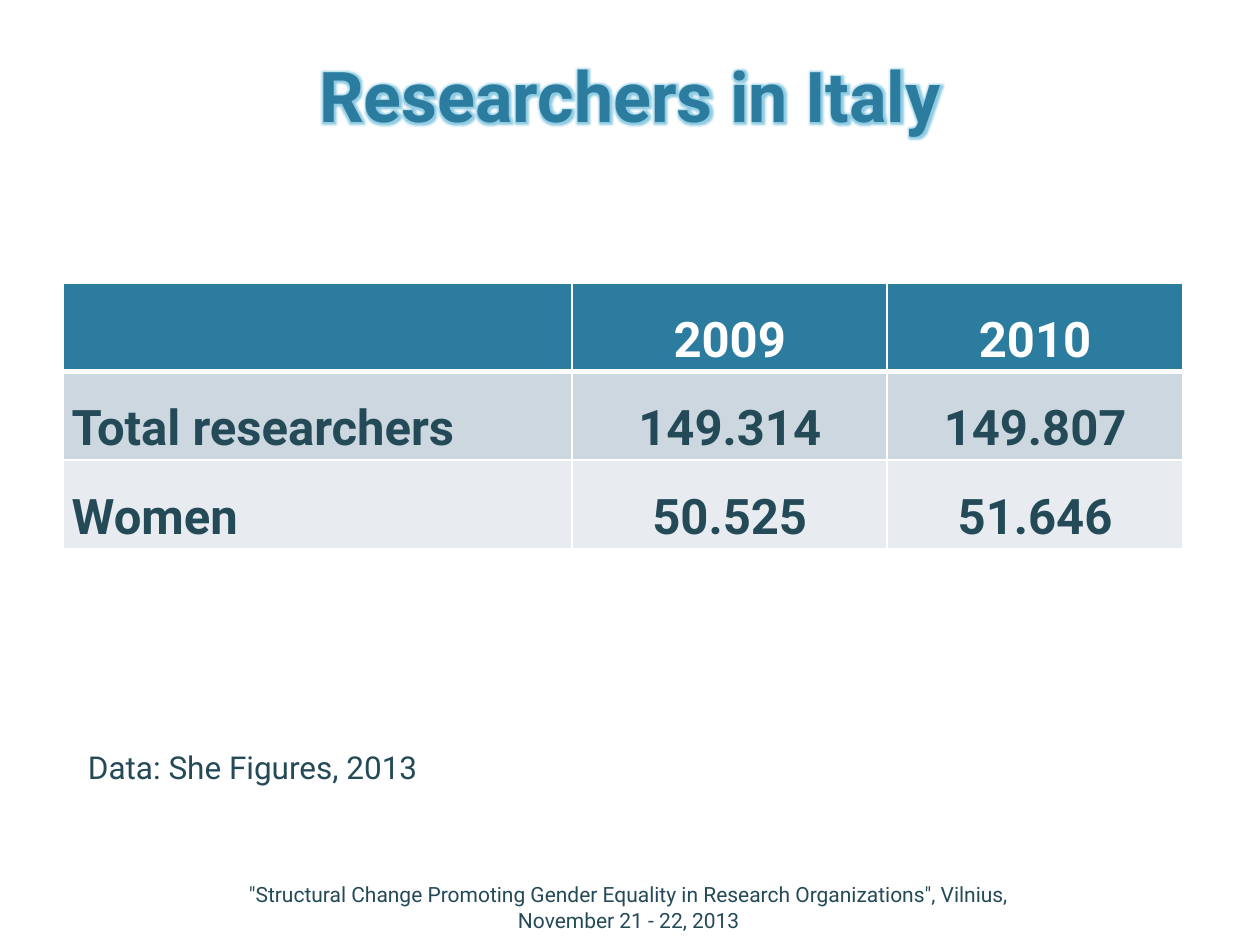
from typing import NamedTuple

from lxml import etree
from pptx import Presentation
from pptx.dml.color import RGBColor
from pptx.enum.text import MSO_ANCHOR, MSO_AUTO_SIZE, PP_ALIGN
from pptx.oxml.ns import qn
from pptx.util import Pt

LEFT, CENTER, JUSTIFY = PP_ALIGN.LEFT, PP_ALIGN.CENTER, PP_ALIGN.JUSTIFY
TOP, MIDDLE, BOTTOM = MSO_ANCHOR.TOP, MSO_ANCHOR.MIDDLE, MSO_ANCHOR.BOTTOM

FONT = "Roboto"
TEAL = RGBColor(0x2C, 0x7C, 0x9F)
DARK = RGBColor(0x24, 0x4A, 0x58)
WHITE = RGBColor(0xFF, 0xFF, 0xFF)
BLUE_GREY = RGBColor(0xCD, 0xD7, 0xDF)
PALE_GREY = RGBColor(0xE8, 0xEC, 0xF0)
GLOW = RGBColor(0x8F, 0xCC, 0xE3)


class Box(NamedTuple):
    left: float
    top: float
    width: float
    height: float


class TableRow(NamedTuple):
    texts: tuple[str, ...]
    fill: RGBColor
    color: RGBColor
    bottom_border: float


COLUMN_WIDTHS = (291, 180, 169)
ROW_HEIGHT = 49
ROWS = (
    TableRow(("", "2009", "2010"), TEAL, WHITE, 3),
    TableRow(("Total researchers", "149.314", "149.807"), BLUE_GREY, DARK, 1),
    TableRow(("Women", "50.525", "51.646"), PALE_GREY, DARK, 1),
)


def write(frame, text: str, *, size: float, color: RGBColor = DARK, bold: bool = False,
          align=LEFT, spacing: float = 1.0):
    """Fill the first paragraph of a frame and return its run."""
    paragraph = frame.paragraphs[0]
    paragraph.alignment = align
    paragraph.line_spacing = spacing
    run = paragraph.add_run()
    run.text = text
    run.font.name = FONT
    run.font.size = Pt(size)
    run.font.bold = bold
    run.font.color.rgb = color
    return run


def add_text(slide, box: Box, text: str, *, anchor=TOP, wrap: bool = True, **style):
    frame = slide.shapes.add_textbox(*map(Pt, box)).text_frame
    frame.word_wrap = wrap
    frame.vertical_anchor = anchor
    if not wrap:
        frame.auto_size = MSO_AUTO_SIZE.SHAPE_TO_FIT_TEXT
    return write(frame, text, **style)


def add_glow(run, color: RGBColor, radius: float) -> None:
    effects = etree.Element(qn("a:effectLst"))
    glow = etree.SubElement(effects, qn("a:glow"), rad=str(Pt(radius)))
    etree.SubElement(glow, qn("a:srgbClr"), val=str(color))
    run.font.fill._xPr.find(qn("a:solidFill")).addnext(effects)


def set_borders(cell, bottom: float) -> None:
    properties = cell._tc.get_or_add_tcPr()
    for position, (side, width) in enumerate(
            (("L", 1), ("R", 1), ("T", 1), ("B", bottom))):
        line = etree.Element(qn(f"a:ln{side}"), w=str(Pt(width)))
        fill = etree.SubElement(line, qn("a:solidFill"))
        etree.SubElement(fill, qn("a:srgbClr"), val=str(WHITE))
        properties.insert(position, line)


def add_table(slide, left: float, top: float, rows: tuple[TableRow, ...]) -> None:
    table = slide.shapes.add_table(
        len(rows), len(COLUMN_WIDTHS), Pt(left), Pt(top),
        Pt(sum(COLUMN_WIDTHS)), Pt(ROW_HEIGHT * len(rows))).table
    for column, width in zip(table.columns, COLUMN_WIDTHS):
        column.width = Pt(width)
    for table_row, row in zip(table.rows, rows):
        for index, (cell, text) in enumerate(zip(table_row.cells, row.texts)):
            cell.fill.solid()
            cell.fill.fore_color.rgb = row.fill
            set_borders(cell, row.bottom_border)
            cell.margin_left = cell.margin_right = Pt(5)
            cell.margin_top = cell.margin_bottom = Pt(0)
            if text:
                write(cell.text_frame, text, size=28, color=row.color, bold=True,
                      align=CENTER if index else JUSTIFY, spacing=1.5)


def main() -> None:
    presentation = Presentation()
    presentation.slide_width, presentation.slide_height = Pt(720), Pt(540)
    slide = presentation.slides.add_slide(presentation.slide_layouts[6])

    # Title
    title = add_text(slide, Box(43.2, 21.6, 633.6, 59.8), "Researchers in Italy",
                     size=40, color=TEAL, bold=True, align=CENTER, anchor=BOTTOM)
    add_glow(title, GLOW, 5)

    # Researcher counts
    add_table(slide, 36, 162, ROWS)

    # Event footer and data source
    add_text(slide, Box(126, 504, 466.6, 28.8),
             '"Structural Change Promoting Gender Equality in Research Organizations", '
             "Vilnius, November 21 - 22, 2013",
             size=12, align=CENTER, anchor=MIDDLE)
    add_text(slide, Box(43.2, 424, 224, 29), "Data: She Figures, 2013",
             size=18, wrap=False)

    presentation.save("out.pptx")


if __name__ == "__main__":
    main()
